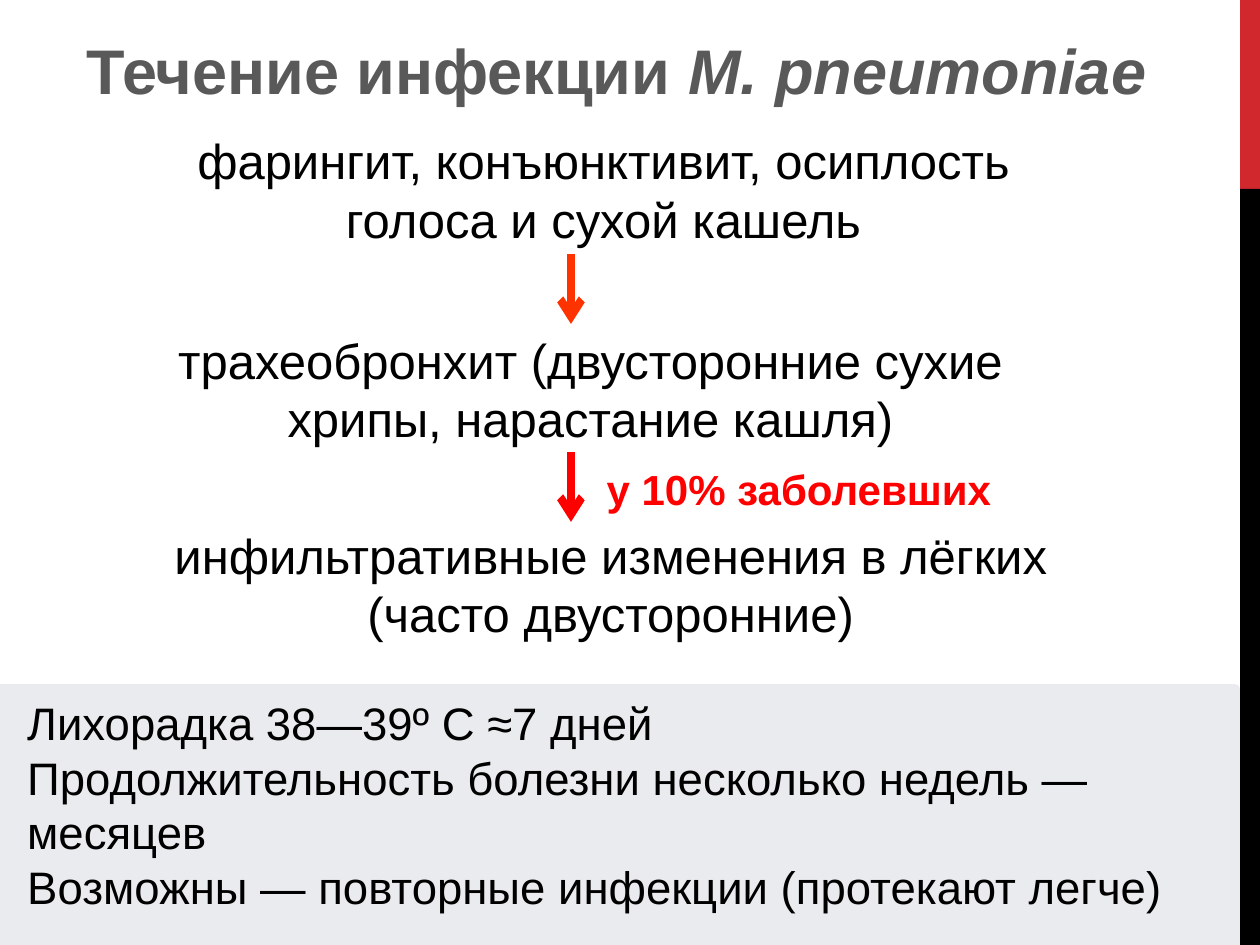
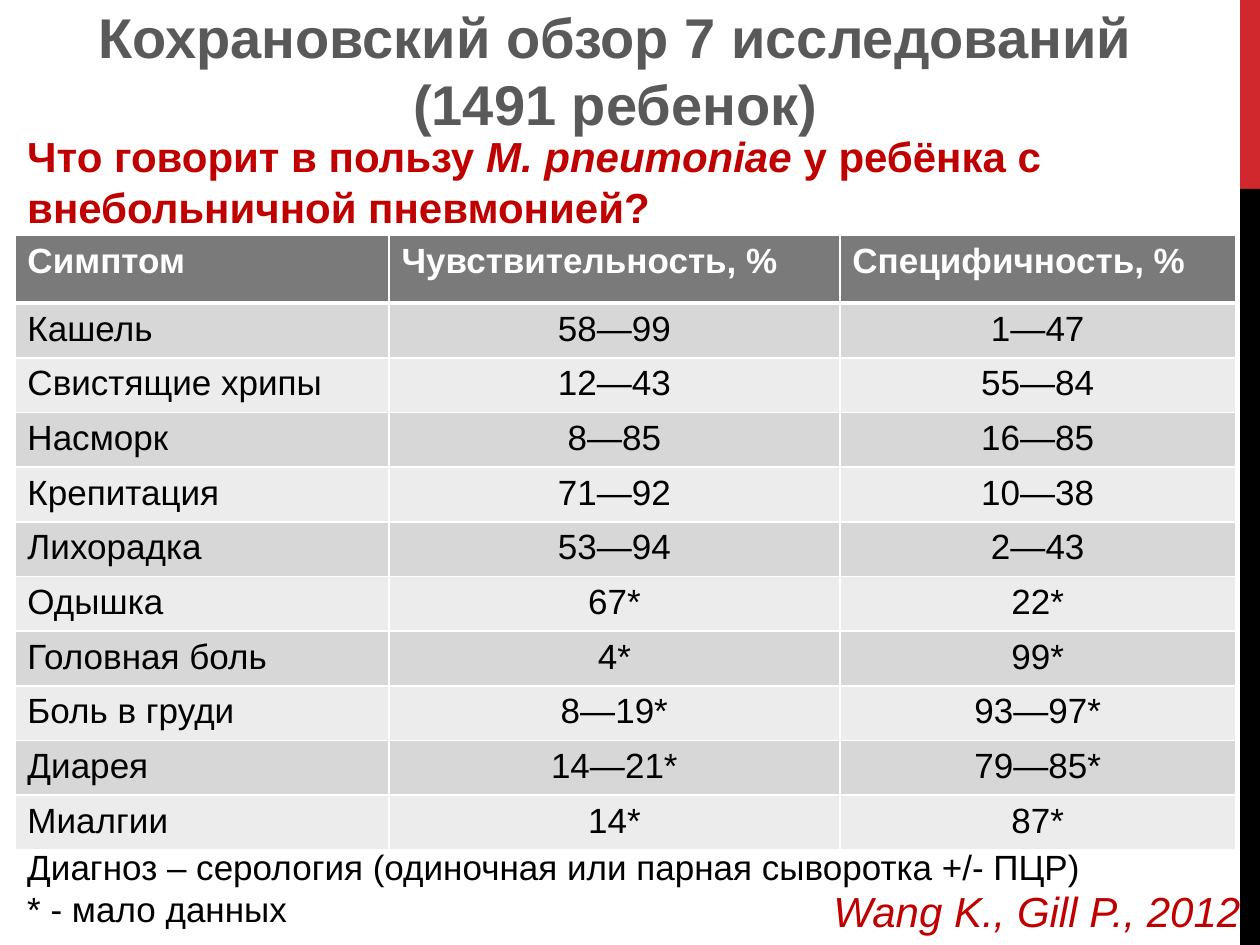
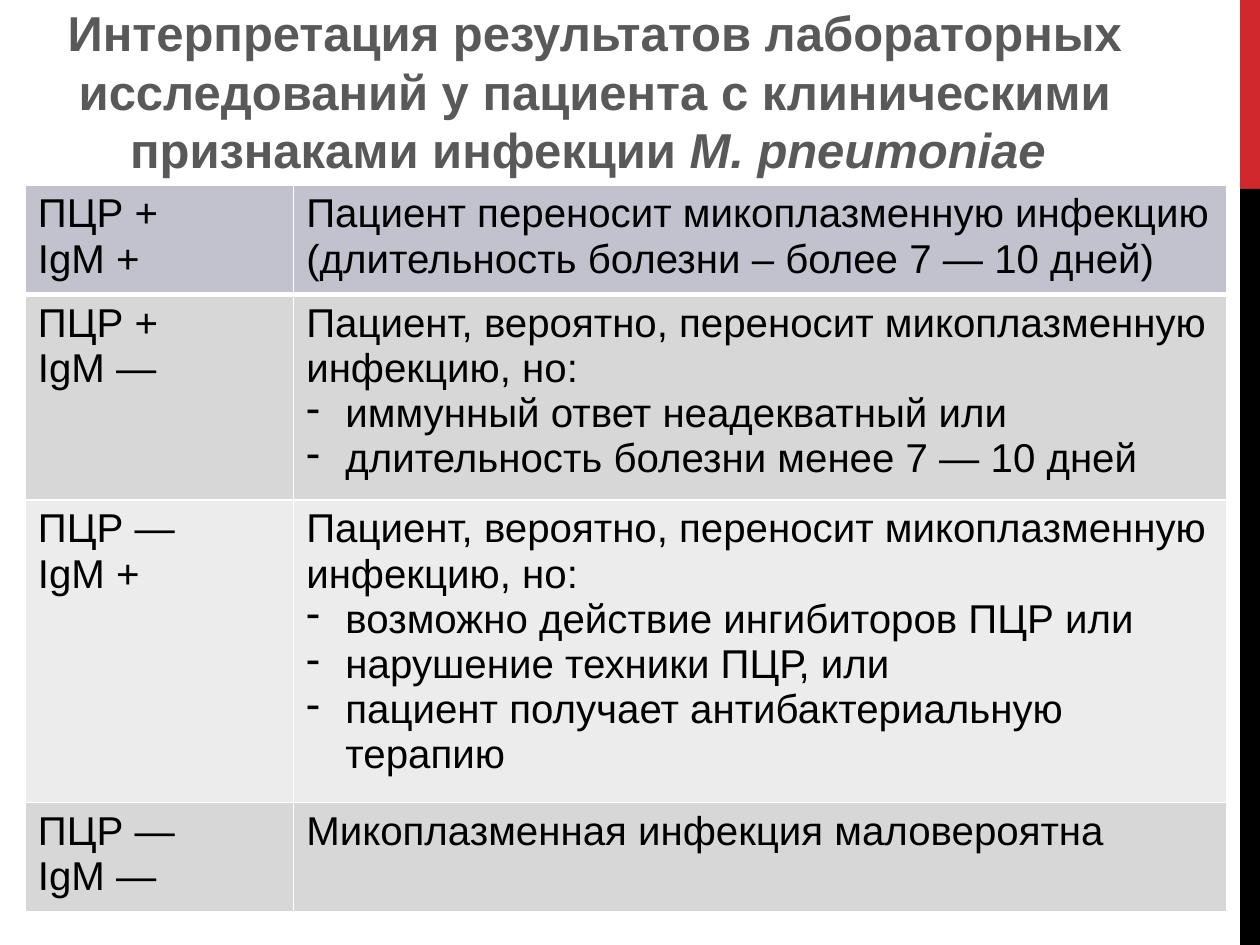
from dataclasses import dataclass

from lxml import etree
from pptx import Presentation
from pptx.dml.color import RGBColor
from pptx.enum import shapes, text
from pptx.oxml import ns
from pptx.util import Cm, Pt

FONT = "Arial"
BLACK, WHITE, RED = "000000", "FFFFFF", "FF0000"
TITLE_GREY, DARK_RED, ORANGE = "595959", "C00000", "FF3300"
BAND_RED, PANEL_GREY = "D1282E", "EAEBEE"
HEADER_GREY, HEADER_LILAC = "7A7A7A", "C1C2CD"
ROW_FILLS = ("D7D7D7", "ECECEC")
ITALIC_MARK = "|"
BULLET_MARK = "- "
LEFT, CENTER = text.PP_ALIGN.LEFT, text.PP_ALIGN.CENTER


@dataclass(frozen=True)
class Style:
    size: float
    color: str = BLACK
    bold: bool = False
    italic: bool = False
    align: text.PP_ALIGN = LEFT


@dataclass(frozen=True)
class Block:
    left: float
    top: float
    width: float
    height: float
    content: str
    style: Style
    wrap: bool = True


@dataclass(frozen=True)
class Panel:
    left: float
    top: float
    width: float
    height: float
    color: str
    line_width: float = 0


@dataclass(frozen=True)
class Arrow:
    x: float
    top: float
    length: float
    color: str


@dataclass(frozen=True)
class Grid:
    left: float
    top: float
    columns: tuple[float, ...]
    heights: tuple[float, ...]
    rows: tuple[tuple[str, ...], ...]
    header_fill: str
    header: Style
    body: tuple[Style, ...]


BANDS = (
    Panel(25, 0, 0.4, 3.81, BAND_RED),
    Panel(25, 3.81, 0.4, 15.24, BLACK),
)
STAGE = Style(28, align=CENTER)


def title_style(size: float) -> Style:
    return Style(size, TITLE_GREY, bold=True, align=CENTER)


def rgb(color: str) -> RGBColor:
    return RGBColor.from_string(color)


def add_bullet(p) -> None:
    pPr = p._p.get_or_add_pPr()
    pPr.set("marL", str(Cm(0.79)))
    pPr.set("indent", str(-Cm(0.79)))
    etree.SubElement(pPr, ns.qn("a:buChar"), char="-")


def write(tf, content: str, style: Style) -> None:
    tf.text = content
    for p in tf.paragraphs:
        p.alignment = style.align
        line = p.text
        if line.startswith(BULLET_MARK):
            add_bullet(p)
            line = line.removeprefix(BULLET_MARK)
        parts = line.split(ITALIC_MARK)
        p.text = parts[0]
        for part in parts[1:]:
            p.add_run().text = part
        for index, r in enumerate(p.runs):
            r.font.name = FONT
            r.font.size = Pt(style.size)
            r.font.bold = style.bold
            r.font.italic = style.italic or index % 2 == 1
            r.font.color.rgb = rgb(style.color)


def draw_block(s, block: Block) -> None:
    sp = s.shapes.add_textbox(Cm(block.left), Cm(block.top), Cm(block.width), Cm(block.height))
    tf = sp.text_frame
    tf.word_wrap = block.wrap
    tf.auto_size = text.MSO_AUTO_SIZE.SHAPE_TO_FIT_TEXT
    write(tf, block.content, block.style)


def draw_panel(s, panel: Panel) -> None:
    sp = s.shapes.add_shape(
        shapes.MSO_SHAPE.RECTANGLE,
        Cm(panel.left), Cm(panel.top), Cm(panel.width), Cm(panel.height),
    )
    sp.shadow.inherit = False
    sp.fill.solid()
    sp.fill.fore_color.rgb = rgb(panel.color)
    if panel.line_width:
        sp.line.color.rgb = rgb(panel.color)
        sp.line.width = Pt(panel.line_width)
    else:
        sp.line.fill.background()


def draw_arrow(s, arrow: Arrow) -> None:
    x = Cm(arrow.x)
    sp = s.shapes.add_connector(
        shapes.MSO_CONNECTOR.STRAIGHT, x, Cm(arrow.top), x, Cm(arrow.top + arrow.length)
    )
    sp.line.color.rgb = rgb(arrow.color)
    sp.line.width = Pt(4.5)
    etree.SubElement(sp.line._get_or_add_ln(), ns.qn("a:tailEnd"), type="arrow")
    etree.SubElement(sp._element.spPr, ns.qn("a:effectLst"))


def add_borders(cell, top: float, bottom: float) -> None:
    tcPr = cell._tc.get_or_add_tcPr()
    for side, width in (("L", 1), ("R", 1), ("T", top), ("B", bottom)):
        ln = etree.SubElement(tcPr, ns.qn(f"a:ln{side}"), w=str(Pt(width)))
        fill = etree.SubElement(ln, ns.qn("a:solidFill"))
        etree.SubElement(fill, ns.qn("a:srgbClr"), val=WHITE)


def draw_grid(s, grid: Grid) -> None:
    table = s.shapes.add_table(
        len(grid.rows), len(grid.columns), Cm(grid.left), Cm(grid.top),
        Cm(sum(grid.columns)), Cm(sum(grid.heights)),
    ).table
    table.first_row = table.horz_banding = False
    for column, width in zip(table.columns, grid.columns):
        column.width = Cm(width)
    for row, height in zip(table.rows, grid.heights):
        row.height = Cm(height)
    for i, row in enumerate(grid.rows):
        for j, content in enumerate(row):
            cell = table.cell(i, j)
            add_borders(cell, top=3 if i == 1 else 1, bottom=3 if i == 0 else 1)
            cell.fill.solid()
            cell.fill.fore_color.rgb = rgb(ROW_FILLS[(i - 1) % 2] if i else grid.header_fill)
            write(cell.text_frame, content, grid.body[j] if i else grid.header)


DRAW = {Block: draw_block, Panel: draw_panel, Arrow: draw_arrow, Grid: draw_grid}

COURSE = (
    Panel(0, 13.89, 24.89, 5.16, PANEL_GREY, 6),
    Block(0.71, 0.51, 23.8, 1.8, "Течение инфекции |M. pneumoniae ", title_style(36)),
    Block(2.31, 2.51, 19.71, 2.64,
          "фарингит, конъюнктивит, осиплость голоса и сухой кашель", STAGE),
    Arrow(11.51, 5.13, 1.4, ORANGE),
    Block(3.1, 6.53, 17.6, 2.64,
          "трахеобронхит (двусторонние сухие хрипы, нарастание кашля)", STAGE),
    Block(1.91, 10.46, 20.8, 2.64,
          "инфильтративные изменения в лёгких (часто двусторонние)", STAGE),
    Block(0.3, 13.89, 24.21, 4.7,
          "Лихорадка 38—39º С ≈7 дней\n"
          "Продолжительность болезни несколько недель —\n"
          "месяцев\n"
          "Возможны — повторные инфекции (протекают легче)", Style(26)),
    Arrow(11.51, 9.12, 1.4, RED),
    Block(11.71, 9.22, 8.79, 1.27, "у 10% заболевших",
          Style(24, RED, bold=True, align=CENTER)),
)

SYMPTOMS = (
    ("Симптом", "Чувствительность, %", "Специфичность, %"),
    ("Кашель", "58—99", "1—47"),
    ("Свистящие хрипы", "12—43", "55—84"),
    ("Насморк", "8—85", "16—85"),
    ("Крепитация", "71—92", "10—38"),
    ("Лихорадка", "53—94", "2—43"),
    ("Одышка", "67*", "22*"),
    ("Головная боль", "4*", "99*"),
    ("Боль в груди", "8—19*", "93—97*"),
    ("Диарея", "14—21*", "79—85*"),
    ("Миалгии", "14*", "87*"),
)

REVIEW = (
    Block(0.3, -0.08, 24.21, 3, "Кохрановский обзор 7 исследований (1491 ребенок)",
          title_style(32)),
    Block(0.3, 2.51, 24.21, 2.31,
          "Что говорит в пользу |M. pneumoniae |у ребёнка с внебольничной пневмонией?",
          Style(24, DARK_RED, bold=True)),
    Grid(0.3, 4.75, (7.54, 9.09, 7.98), (1.36,) + (1.1,) * 10, SYMPTOMS,
         HEADER_GREY, Style(20, WHITE, bold=True),
         (Style(20), Style(20, align=CENTER), Style(20, align=CENTER))),
    Block(16.51, 17.73, 8.79, 1.27, "Wang K., Gill P., 2012",
          Style(24, DARK_RED, italic=True, align=CENTER), wrap=False),
    Block(0.3, 16.92, 24.21, 1.96,
          "Диагноз – серология (одиночная или парная сыворотка +/- ПЦР)\n"
          "* - мало данных", Style(20)),
)

PROBABLE = "Пациент, вероятно, переносит микоплазменную инфекцию, но:\n"
LAB_RESULTS = (
    ("ПЦР +\nIgM +",
     "Пациент переносит микоплазменную инфекцию (длительность болезни – более 7 — 10 дней)"),
    ("ПЦР +\nIgM —",
     PROBABLE + "- иммунный ответ неадекватный или\n"
     "- длительность болезни менее 7 — 10 дней"),
    ("ПЦР —\nIgM +",
     PROBABLE + "- возможно действие ингибиторов ПЦР или\n"
     "- нарушение техники ПЦР, или\n"
     "- пациент получает антибактериальную терапию"),
    ("ПЦР —\nIgM —", "Микоплазменная инфекция маловероятна"),
)

INTERPRETATION = (
    Block(0.89, -0.08, 22.2, 3.84,
          "Интерпретация результатов лабораторных исследований у пациента "
          "с клиническими признаками инфекции |M. pneumoniae ", title_style(28)),
    Grid(0.51, 3.73, (5.41, 18.8), (2.2, 4.15, 6.09, 2.2), LAB_RESULTS,
         HEADER_LILAC, Style(23), (Style(23), Style(23))),
)


def main() -> None:
    prs = Presentation()
    prs.slide_width, prs.slide_height = Cm(25.4), Cm(19.05)
    for items in (COURSE, REVIEW, INTERPRETATION):
        s = prs.slides.add_slide(prs.slide_layouts[6])
        for item in BANDS + items:
            DRAW[type(item)](s, item)
    prs.save("out.pptx")


if __name__ == "__main__":
    main()
